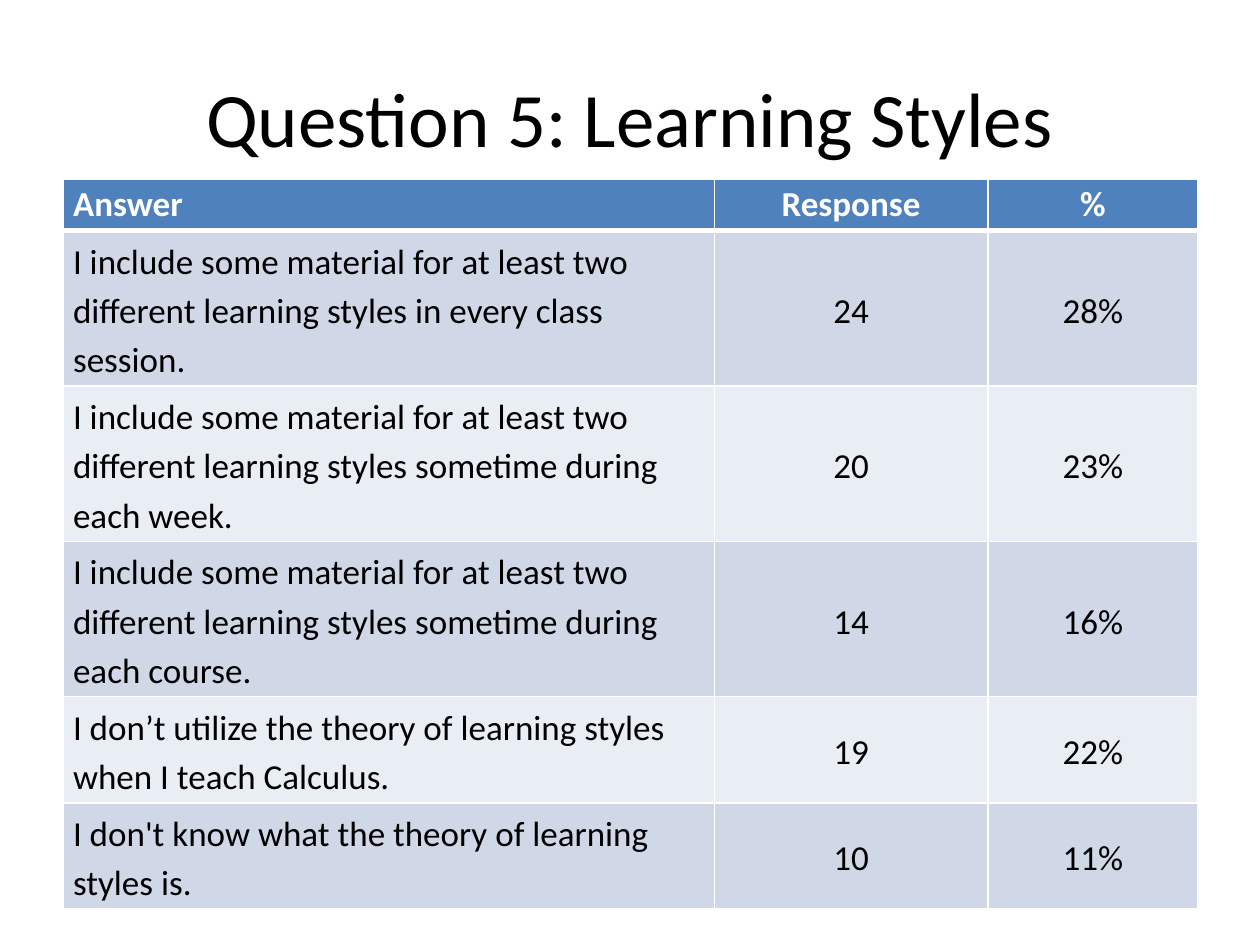
import pptx
import pptx.dml.color
import pptx.enum.text
import pptx.oxml
import pptx.oxml.ns
import pptx.util
from pptx.util import Inches

RGBColor = pptx.dml.color.RGBColor
WHITE = RGBColor(0xFF, 0xFF, 0xFF)
BLACK = RGBColor(0x00, 0x00, 0x00)
HEADER_BLUE = RGBColor(0x4F, 0x81, 0xBD)
BAND_DARK = RGBColor(0xD0, 0xD8, 0xE8)
BAND_LIGHT = RGBColor(0xE9, 0xED, 0xF4)

FONT = "Calibri"
ALIGN = pptx.enum.text.PP_ALIGN
ANCHOR = pptx.enum.text.MSO_ANCHOR

COLUMN_WIDTHS = (5.17, 2.17, 1.67)
ROW_HEIGHT = 0.41
ROWS = (
    ("Answer", "Response", "%"),
    ("I include some material for at least two different learning styles "
     "in every class session.", "24", "28%"),
    ("I include some material for at least two different learning styles "
     "sometime during each week.", "20", "23%"),
    ("I include some material for at least two different learning styles "
     "sometime during each course.", "14", "16%"),
    ("I don’t utilize the theory of learning styles when I teach Calculus.",
     "19", "22%"),
    ("I don't know what the theory of learning styles is.", "10", "11%"),
)


def format_text(para, size, color, bold=False):
    for run in para.runs:
        run.font.name = FONT
        run.font.size = pptx.util.Pt(size)
        run.font.color.rgb = color
        run.font.bold = bold


def add_title(page, text):
    title = page.shapes.title
    title.left, title.top = Inches(0.5), Inches(0.3)
    title.width, title.height = Inches(9), Inches(1.25)
    title.text_frame.text = text
    title.text_frame.vertical_anchor = ANCHOR.MIDDLE
    para = title.text_frame.paragraphs[0]
    para.alignment = ALIGN.CENTER
    format_text(para, 44, BLACK)


def set_borders(cell, **widths):
    """Draw white cell borders; widths are points by side: L, R, T, B."""
    properties = cell._tc.get_or_add_tcPr()
    for side, width in widths.items():
        properties.append(pptx.oxml.parse_xml(
            f'<a:ln{side} {pptx.oxml.ns.nsdecls("a")} w="{pptx.util.Pt(width)}">'
            f'<a:solidFill><a:srgbClr val="{WHITE}"/></a:solidFill>'
            f'</a:ln{side}>'))


def format_cell(cell, row, column):
    is_header = row == 0
    set_borders(cell, L=1, R=1, T=3 if row == 1 else 1, B=3 if is_header else 1)
    cell.fill.solid()
    if is_header:
        cell.fill.fore_color.rgb = HEADER_BLUE
    else:
        cell.fill.fore_color.rgb = BAND_DARK if row % 2 else BAND_LIGHT
        cell.vertical_anchor = ANCHOR.MIDDLE
    cell.margin_left = cell.margin_right = Inches(0.08)
    cell.margin_top = cell.margin_bottom = Inches(0.03)
    para = cell.text_frame.paragraphs[0]
    para.alignment = ALIGN.CENTER if column else ALIGN.LEFT
    if not is_header:
        para.line_spacing = 1.15
    format_text(para, 20, WHITE if is_header else BLACK, bold=is_header)


def add_answer_table(page):
    table = page.shapes.add_table(
        len(ROWS), len(COLUMN_WIDTHS), Inches(0.5), Inches(1.42),
        Inches(sum(COLUMN_WIDTHS)), Inches(ROW_HEIGHT * len(ROWS))).table
    for column, width in zip(table.columns, COLUMN_WIDTHS):
        column.width = Inches(width)
    for row, values in enumerate(ROWS):
        table.rows[row].height = Inches(ROW_HEIGHT)
        for column, value in enumerate(values):
            cell = table.cell(row, column)
            cell.text_frame.text = value
            format_cell(cell, row, column)


def main():
    deck = pptx.Presentation()
    deck.slide_width, deck.slide_height = Inches(10), Inches(7.5)
    page = deck.slides.add_slide(deck.slide_layouts[5])
    add_title(page, "Question 5: Learning Styles")
    add_answer_table(page)
    deck.save("out.pptx")


if __name__ == "__main__":
    main()
